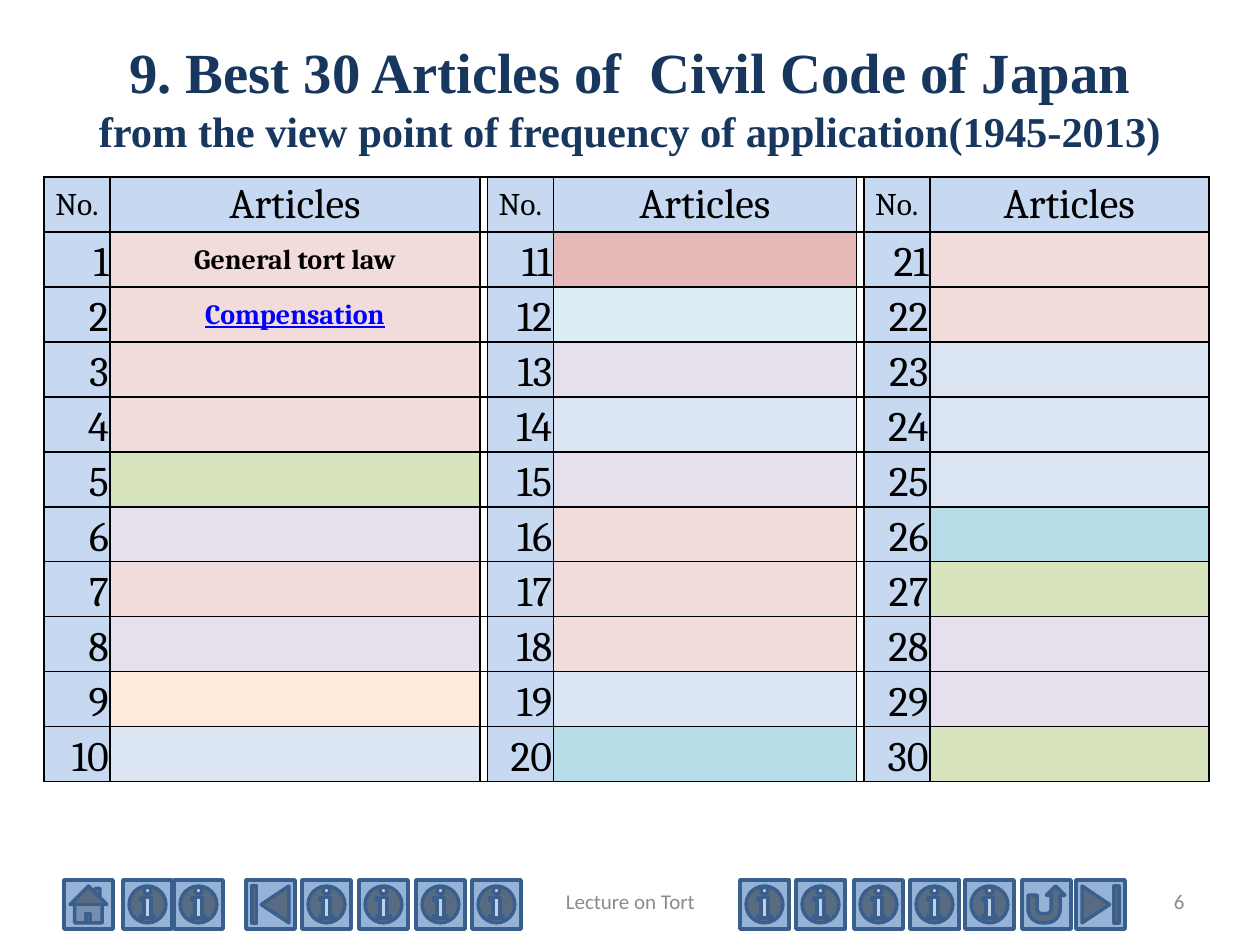
from lxml import etree
from pptx import Presentation
from pptx import util as u
from pptx.dml.color import RGBColor
from pptx.enum import shapes, text
from pptx.oxml.ns import qn

# Content
TITLE = [("9. Best 30 Articles of  Civil Code of Japan", 32.4),
         ("from the view point of frequency of application(1945-2013)", 24.3)]
HEADS = [("No.", 18), ("Articles", 24)]
NAMES = {1: "General tort law", 2: "Compensation"}
LINKS = {2}
# Colour of each article, ten per block
TINTS = [
    "rose rose rose rose green violet rose violet peach blue".split(),
    "red aqua violet blue violet rose rose rose blue teal".split(),
    "rose rose blue blue blue teal green violet violet green".split(),
]
COLORS = {
    "navy": "17375E", "black": "000000", "grey": "8C8C8C", "link": "0000FF",
    "head": "C6D9F1", "rose": "F2DCDB", "red": "E6B9B8", "green": "D7E4BD",
    "violet": "E6E0EC", "peach": "FDEADA", "blue": "DCE6F2",
    "aqua": "DBEEF4", "teal": "B7DEE8", "button": "95B3D7", "edge": "3A5F8C",
}
BUTTONS = {
    "HOME": [64],
    "INFORMATION": [123, 174, 302, 359, 416, 472, 740, 796, 854, 910, 965],
    "BEGINNING": [246],
    "RETURN": [1022],
    "END": [1076],
}
NOTES = [("Lecture on Tort", (431, 876, 399, 50), "CENTER"),
         ("6", (903, 876, 294, 50), "RIGHT")]

# Sizes in px
COLS = [66, 370, 7, 66, 303, 7, 66, 279]
ROW = 55
SIDE = 49


def px(n):
    return u.Emu(n * 914400 // 126)


def rgb(name):
    return RGBColor.from_string(COLORS[name])


def put(frame, lines, font="Cambria", color="black", bold=False,
        under=False, align="CENTER"):
    """Write (text, size) lines as one paragraph with line breaks."""
    frame.word_wrap = True
    para = frame.paragraphs[0]
    para.alignment = getattr(text.PP_ALIGN, align)
    for i, (words, size) in enumerate(lines):
        if i:
            para.add_line_break()
            mark = etree.SubElement(para._p[-1], qn("a:rPr"))
            mark.set("sz", str(round(lines[i - 1][1] * 100)))
        run = para.add_run()
        run.text = words
        run.font.size, run.font.name = u.Pt(size), font
        run.font.bold, run.font.underline = bold, under
        run.font.color.rgb = rgb(color)


def border(cell):
    props = cell._tc.get_or_add_tcPr()
    for side in "LRTB":
        line = etree.SubElement(props, qn("a:ln" + side), w="12700")
        fill = etree.SubElement(line, qn("a:solidFill"))
        etree.SubElement(fill, qn("a:srgbClr"), val=COLORS["black"])


def paint(cell, tint):
    cell.fill.solid()
    cell.fill.fore_color.rgb = rgb(tint)


deck = Presentation()
deck.slide_width, deck.slide_height = px(1260), px(945)
slide = deck.slides.add_slide(deck.slide_layouts[5])

# Title
title = slide.shapes.title
title.left, title.top, title.width, title.height = map(px, (63, 38, 1134, 117))
title.text_frame.auto_size = text.MSO_AUTO_SIZE.NONE
title.text_frame.vertical_anchor = text.MSO_ANCHOR.MIDDLE
put(title.text_frame, TITLE, font="Times New Roman", color="navy", bold=True)

# Navigation buttons
for kind, lefts in BUTTONS.items():
    preset = getattr(shapes.MSO_SHAPE, "ACTION_BUTTON_" + kind)
    for left in lefts:
        button = slide.shapes.add_shape(
            preset, px(left), px(880), px(SIDE), px(SIDE))
        button.shadow.inherit = False
        button.fill.solid()
        button.fill.fore_color.rgb = rgb("button")
        button.line.color.rgb = rgb("edge")
        button.line.width = u.Pt(2)

# Table frame
count = len(TINTS[0])
table = slide.shapes.add_table(
    count + 1, len(COLS), px(44), px(177),
    px(sum(COLS)), px(ROW * (count + 1))).table
table.first_row = table.horz_banding = False
for col, width in zip(table.columns, COLS):
    col.width = px(width)
for row in table.rows:
    row.height = px(ROW)
for cell in table.iter_cells():
    cell.margin_left = cell.margin_right = cell.margin_top = u.Inches(0.01)
    cell.margin_bottom = 0
    cell.vertical_anchor = text.MSO_ANCHOR.MIDDLE
    border(cell)
    cell.fill.background()

# Three blocks: number column, article column, narrow gap
for b, tints in enumerate(TINTS):
    for c, head in enumerate(HEADS):
        cell = table.cell(0, 3 * b + c)
        paint(cell, "head")
        put(cell.text_frame, [head])
    for r, tint in enumerate(tints, 1):
        number = b * count + r
        label, article = table.cell(r, 3 * b), table.cell(r, 3 * b + 1)
        paint(label, "head")
        label.vertical_anchor = text.MSO_ANCHOR.BOTTOM
        put(label.text_frame, [(str(number), 24)], align="RIGHT")
        paint(article, tint)
        if number in NAMES:
            linked = number in LINKS
            put(article.text_frame, [(NAMES[number], 16)], bold=True,
                under=linked, color="link" if linked else "black")

# Footer and slide number
for words, place, align in NOTES:
    box = slide.shapes.add_textbox(*map(px, place))
    box.text_frame.vertical_anchor = text.MSO_ANCHOR.MIDDLE
    put(box.text_frame, [(words, 12)], font="Calibri", color="grey",
        align=align)

deck.save("out.pptx")
